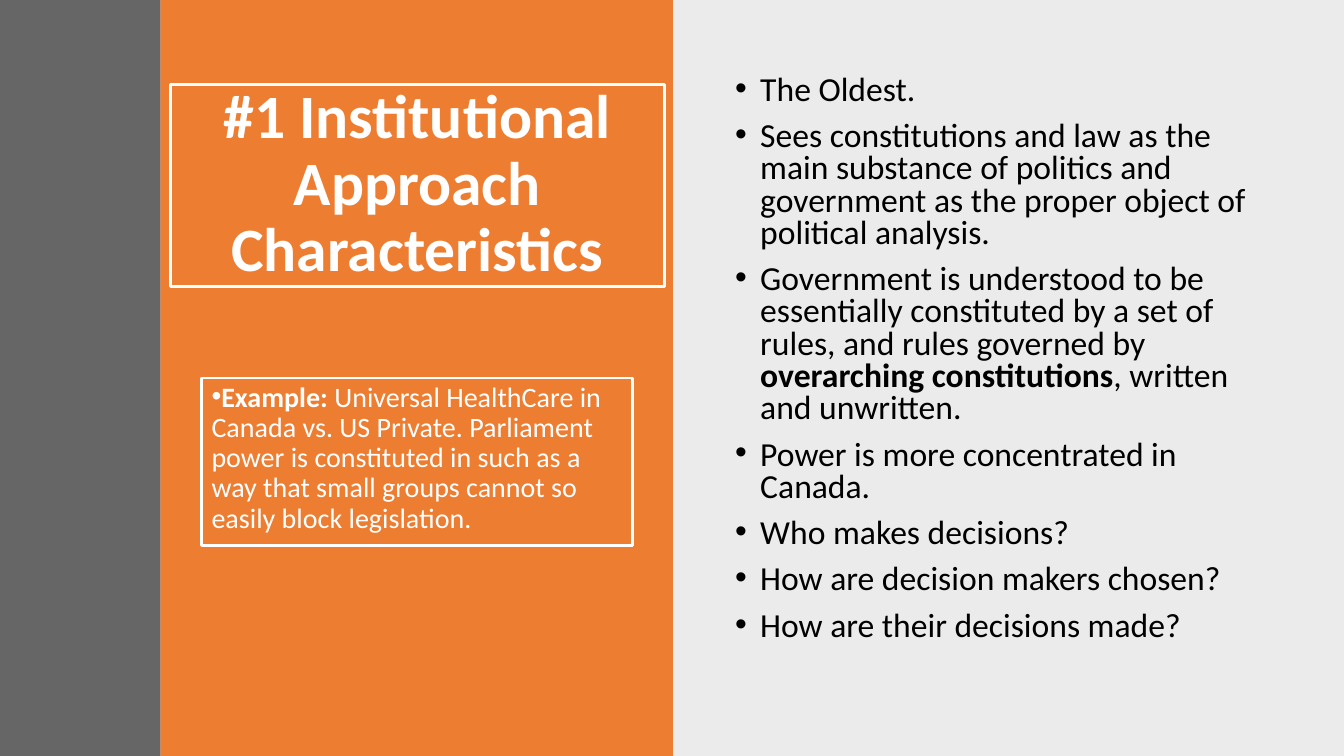
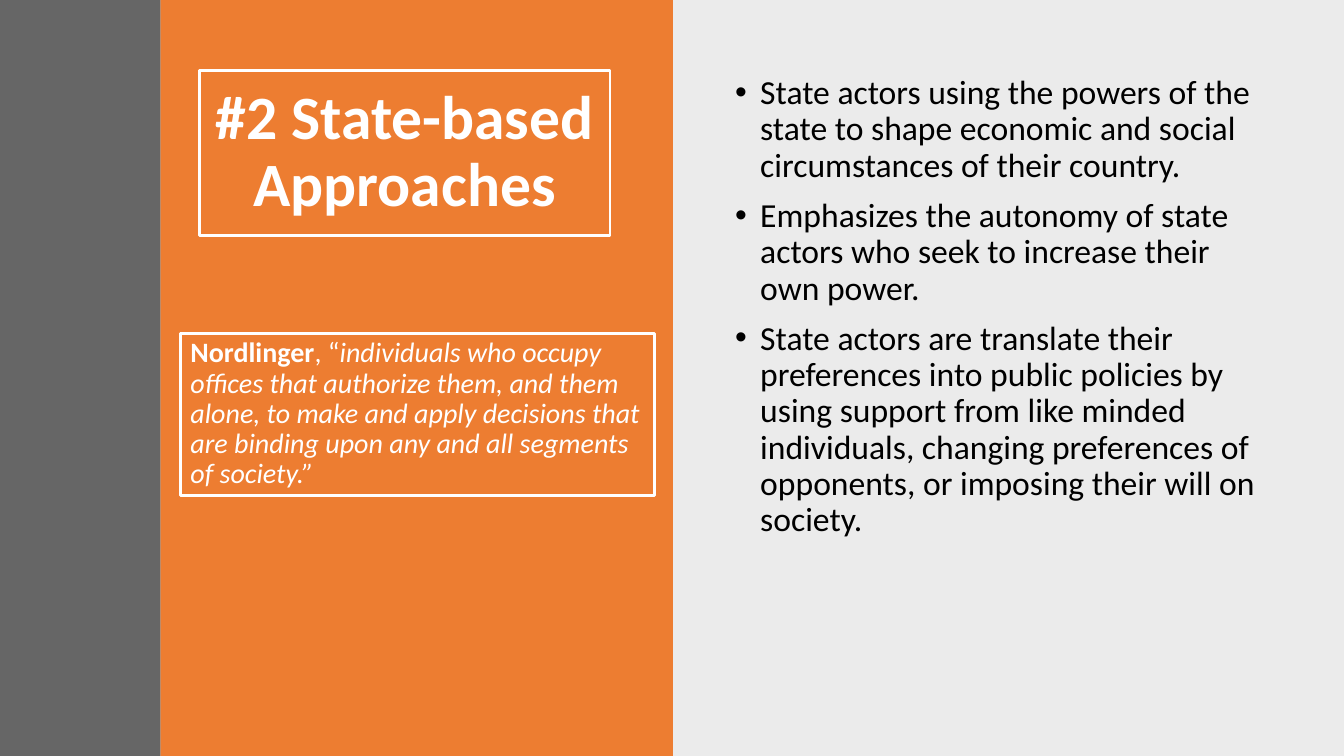
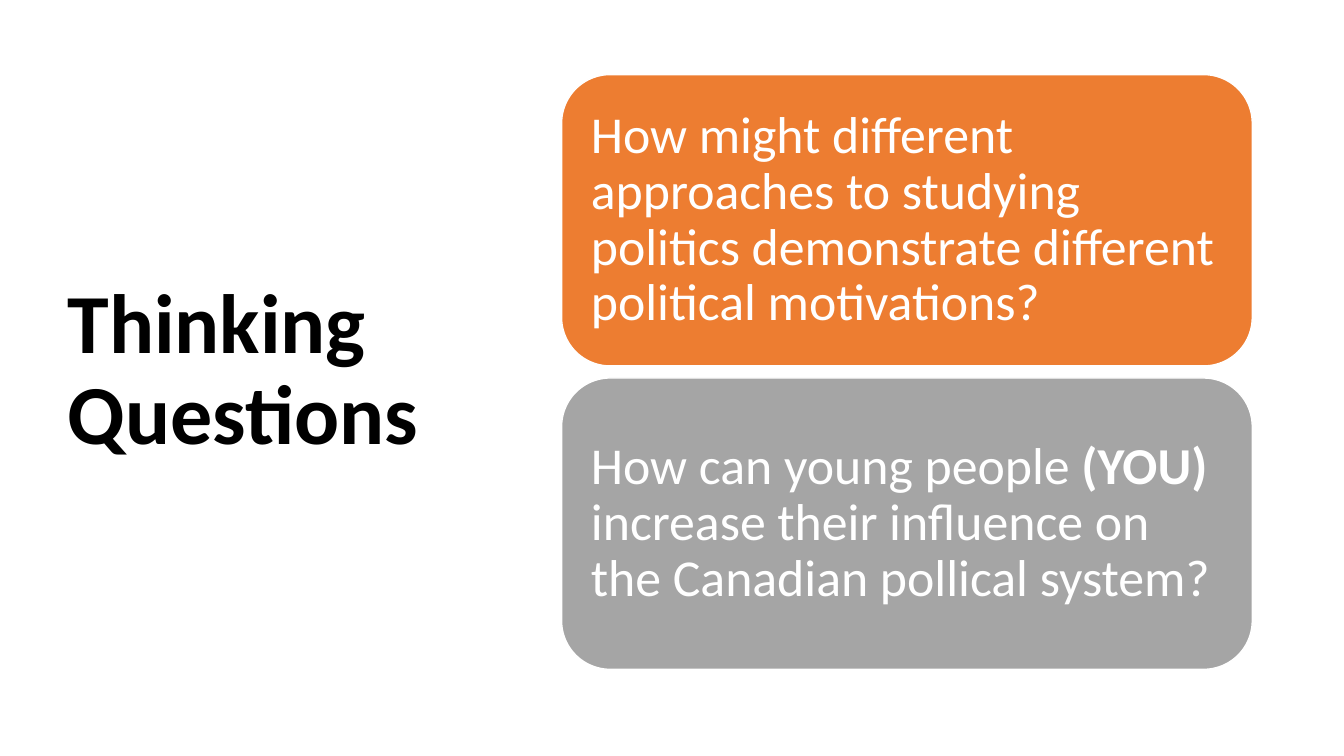
from lxml.etree import SubElement
from pptx import Presentation
from pptx.dml.color import RGBColor
from pptx.enum.shapes import MSO_SHAPE as Shape
from pptx.enum.text import MSO_ANCHOR as Anchor, MSO_AUTO_SIZE as AutoSize, PP_ALIGN as Align
from pptx.oxml.ns import qn
from pptx.util import Inches, Pt

FONT = "Calibri"
WHITE, BLACK, ORANGE, GREY, CHARCOAL = "FFFFFF", "000000", "ED7D31", "A5A5A5", "404040"
WIDTH, HEIGHT = 13.33, 7.5
STRIP_WIDTH = 1.59


def color(value):
    return RGBColor.from_string(value)


class Slides:
    """Holds the deck style and the slide being built."""

    def __init__(self):
        self.deck = Presentation()
        self.deck.slide_width = Inches(WIDTH)
        self.deck.slide_height = Inches(HEIGHT)
        self.page = None

    def start(self, layout):
        self.page = self.deck.slides.add_slide(self.deck.slide_layouts.get_by_name(layout))

    def start_approach(self):
        """Start a slide with a grey strip, an orange panel and a pale panel."""
        self.start("Title and Content")
        middle = WIDTH / 2
        self.shape((middle, 0, middle, HEIGHT), BLACK, opacity=8)
        self.shape((STRIP_WIDTH, 0, middle - STRIP_WIDTH + 0.01, HEIGHT), ORANGE)
        self.shape((0, 0, STRIP_WIDTH, HEIGHT), CHARCOAL, opacity=80)

    def place(self, box, at):
        box.left, box.top, box.width, box.height = map(Inches, at)

    def outline(self, box, width):
        box.line.color.rgb = color(WHITE)
        box.line.width = Pt(width)

    def shape(self, at, fill=None, opacity=100, kind=Shape.RECTANGLE):
        box = self.page.shapes.add_shape(kind, *map(Inches, at))
        box.shadow.inherit = False
        box.line.fill.background()
        if fill is None:
            box.fill.background()
            return box
        box.fill.solid()
        box.fill.fore_color.rgb = color(fill)
        if opacity < 100:
            tint = next(box.element.spPr.iter(qn("a:srgbClr")))
            SubElement(tint, qn("a:alpha"), val=str(opacity * 1000))
        return box

    def set_text(self, box, paragraphs, size, ink, anchor=Anchor.TOP, align=Align.LEFT,
                 spacing=0.9, before=0, after=0):
        """Fill a box with paragraphs, each a list of (text, style letters)."""
        frame = box.text_frame
        frame.word_wrap = True
        frame.auto_size = AutoSize.NONE
        frame.vertical_anchor = anchor
        for number, parts in enumerate(paragraphs):
            para = frame.add_paragraph() if number else frame.paragraphs[0]
            para.alignment = align
            para.line_spacing = spacing
            para.space_before, para.space_after = Pt(before), Pt(after)
            for text, style in parts:
                span = para.add_run()
                span.text = text
                font = span.font
                font.name, font.size = FONT, Pt(size)
                font.bold, font.italic = "b" in style, "i" in style
                font.color.rgb = color(ink)

    def bullet(self, para, margin):
        """Give a paragraph a round bullet with a quarter-inch hanging indent."""
        props = para._p.get_or_add_pPr()
        props.set("marL", str(Inches(margin)))
        props.set("indent", str(Inches(-0.25)))
        SubElement(props, qn("a:buFont"), typeface="Arial")
        SubElement(props, qn("a:buChar"), char="•")

    def placeholder(self, number, at):
        """Move a placeholder into position, in front of the panels."""
        box = self.page.placeholders[number]
        self.place(box, at)
        self.page.shapes.element.append(box.element)
        return box

    def title(self, text, at, size=44, ink=WHITE, align=Align.CENTER, framed=True):
        box = self.placeholder(0, at)
        if framed:
            self.outline(box, 2)
        self.set_text(box, [[(text, "b")]], size, ink, Anchor.MIDDLE, align)

    def body(self, paragraphs, height, spacing):
        box = self.placeholder(1, (7.19, 0.7, 5.53, height))
        self.set_text(box, paragraphs, 24, BLACK, spacing=spacing, before=10)
        for para in box.text_frame.paragraphs:
            self.bullet(para, 0.25)

    def note(self, parts, at, bulleted=False):
        box = self.shape(at)
        self.outline(box, 2)
        self.set_text(box, [parts], 20, WHITE, after=6)
        if bulleted:
            self.bullet(box.text_frame.paragraphs[0], 0)

    def card(self, parts, at, fill):
        box = self.shape(at, fill, kind=Shape.ROUNDED_RECTANGLE)
        self.outline(box, 1)
        frame = box.text_frame
        frame.margin_left = frame.margin_right = Inches(0.15)
        frame.margin_top = frame.margin_bottom = Inches(0.15)
        self.set_text(box, [parts], 37, WHITE, Anchor.MIDDLE)


def institutional(slides):
    slides.start_approach()
    slides.title("#1 Institutional Approach Characteristics", (1.69, 0.84, 4.9, 2))
    slides.body([
        [("The Oldest.", "")],
        [("Sees constitutions and law as the main substance of politics and government "
          "as the proper object of political analysis.", "")],
        [("Government is understood to be essentially constituted by a set of rules, "
          "and rules governed by ", ""),
         ("overarching constitutions", "b"), (", written and unwritten.", "")],
        [("Power is more concentrated in Canada.", "")],
        [("Who makes decisions?", "")],
        [("How are decision makers chosen?", "")],
        [("How are their decisions made?", "")],
    ], 6.21, 0.8)
    slides.note([
        ("Example: ", "b"),
        ("Universal HealthCare in Canada vs. US Private. Parliament power is constituted "
         "in such as a way that small groups cannot so easily block legislation.", ""),
    ], (2, 3.75, 4.27, 1.66), bulleted=True)


def state_based(slides):
    slides.start_approach()
    slides.title("#2 State-based Approaches", (1.98, 0.7, 4.07, 1.64))
    slides.body([
        [("State actors using the powers of the state to shape economic and social "
          "circumstances of their country.", "")],
        [("Emphasizes the autonomy of state actors who seek to increase their own power.", "")],
        [("State actors are translate their preferences into public policies by using "
          "support from like minded individuals, changing preferences of opponents, "
          "or imposing their will on society.", "")],
    ], 5.82, 0.9)
    slides.note([
        ("Nordlinger", "b"), (", “", ""),
        ("individuals who occupy offices that authorize them, and them alone, to make and "
         "apply decisions that are binding upon any and all segments of society.”", "i"),
    ], (1.79, 3.31, 4.7, 1.61))


def questions(slides):
    slides.start("Title Only")
    slides.title("Thinking Questions", (0.57, 0.68, 4.16, 6.02), 60, BLACK, Align.LEFT, False)
    cards = [
        (ORANGE, [("How might different approaches to studying politics demonstrate "
                   "different political motivations?", "")]),
        (GREY, [("How can young people ", ""), ("(YOU) ", "b"),
                ("increase their influence on the Canadian pollical system?", "")]),
    ]
    for row, (fill, parts) in enumerate(cards):
        slides.card(parts, (5.57, 0.74 + row * 3.01, 6.85, 2.89), fill)


def main():
    slides = Slides()
    institutional(slides)
    state_based(slides)
    questions(slides)
    slides.deck.save("out.pptx")


if __name__ == "__main__":
    main()
